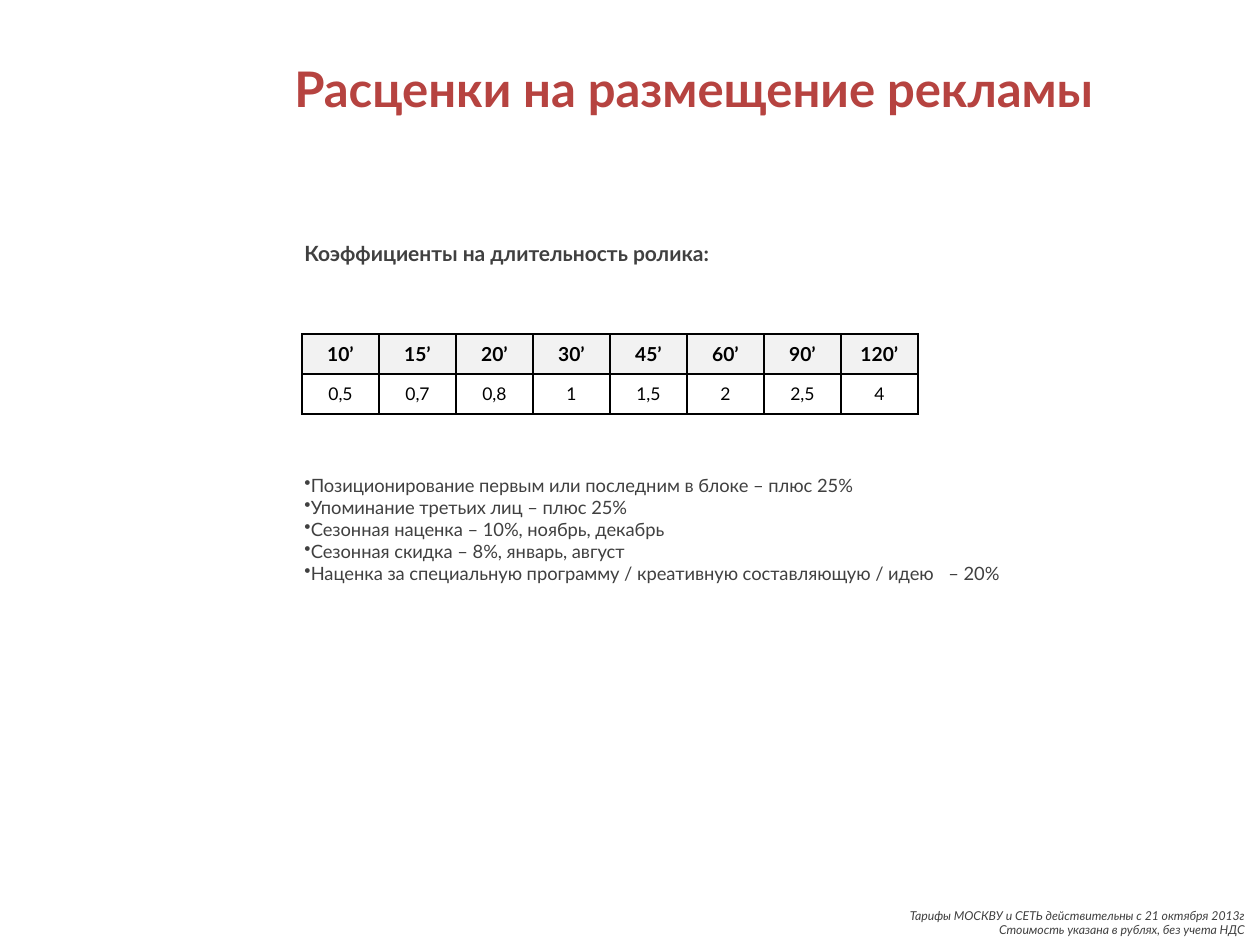
import pptx
import pptx.dml.color
import pptx.enum.text
import pptx.oxml
import pptx.oxml.ns
import pptx.util

EMU_PER_PX = 914400 / 126
ALIGN = pptx.enum.text.PP_ALIGN
MIDDLE = pptx.enum.text.MSO_ANCHOR.MIDDLE
RED, GRAY, BLACK, HEADER_FILL = "B64340", "404040", "000000", "F2F2F2"

DURATIONS = ["10’", "15’", "20’", "30’", "45’", "60’", "90’", "120’"]
COEFFICIENTS = ["0,5", "0,7", "0,8", "1", "1,5", "2", "2,5", "4"]
CONDITIONS = [
    "Позиционирование первым или последним в блоке – плюс 25%",
    "Упоминание третьих лиц – плюс 25%",
    "Сезонная наценка – 10%, ноябрь, декабрь",
    "Сезонная скидка – 8%, январь, август",
    "Наценка за специальную программу / креативную составляющую / идею\t– 20%",
]
FOOTNOTE = [
    "Тарифы МОСКВУ и СЕТЬ действительны с 21 октября 2013г",
    "Стоимость указана в рублях, без учета НДС",
]


def px(length):
    return pptx.util.Emu(round(length * EMU_PER_PX))


def rgb(color):
    return pptx.dml.color.RGBColor.from_string(color)


def add_xml(parent, tag, content="", attributes=""):
    namespace = pptx.oxml.ns.nsdecls("a")
    parent.append(pptx.oxml.parse_xml(
        f"<a:{tag} {namespace} {attributes}>{content}</a:{tag}>"))


class SlideBuilder:
    font_name = "Lato"

    def __init__(self, slide):
        self.slide = slide

    def style(self, para, size, color, bold=False, italic=False, align=ALIGN.LEFT):
        para.alignment = align
        for span in para.runs:
            span.font.name = self.font_name
            span.font.size = pptx.util.Pt(size)
            span.font.color.rgb = rgb(color)
            span.font.bold = bold
            span.font.italic = italic

    def text(self, left, top, width, height, lines, size, color, **style):
        box = self.slide.shapes.add_textbox(px(left), px(top), px(width), px(height))
        frame = box.text_frame
        frame.word_wrap = True
        frame.vertical_anchor = MIDDLE
        frame.text = "\n".join(lines)
        for para in frame.paragraphs:
            self.style(para, size, color, **style)
        return frame

    def bullets(self, left, top, width, height, lines, size, color, tab):
        frame = self.text(left, top, width, height, lines, size, color)
        for para in frame.paragraphs:
            properties = para._p.get_or_add_pPr()
            add_xml(properties, "buChar", attributes='char="•"')
            if "\t" in para.text:
                add_xml(properties, "tabLst", f'<a:tab pos="{px(tab)}" algn="l"/>')

    def border(self, cell, color, width):
        properties = cell._tc.get_or_add_tcPr()
        line_width = pptx.util.Pt(width)
        for side in "LRTB":
            add_xml(properties, f"ln{side}",
                    f'<a:solidFill><a:srgbClr val="{color}"/></a:solidFill>',
                    f'w="{line_width}"')

    def table(self, left, top, column_width, row_height, rows):
        columns = len(rows[0])
        grid = self.slide.shapes.add_table(
            len(rows), columns, px(left), px(top),
            px(column_width * columns), px(row_height * len(rows))).table
        grid.horz_banding = False
        grid.first_row = False
        for row_index, values in enumerate(rows):
            header = row_index == 0
            for column_index, value in enumerate(values):
                cell = grid.cell(row_index, column_index)
                cell.text = value
                cell.vertical_anchor = MIDDLE
                cell.margin_left = cell.margin_right = 0
                cell.margin_top = cell.margin_bottom = 0
                self.border(cell, BLACK, 1)
                if header:
                    cell.fill.solid()
                    cell.fill.fore_color.rgb = rgb(HEADER_FILL)
                else:
                    cell.fill.background()
                self.style(cell.text_frame.paragraphs[0], 11 if header else 10,
                           BLACK, bold=header, align=ALIGN.CENTER)


def main():
    deck = pptx.Presentation()
    deck.slide_width, deck.slide_height = px(1260), px(945)
    page = SlideBuilder(deck.slides.add_slide(deck.slide_layouts[6]))
    page.text(282, 20, 978, 135, ["Расценки на размещение рекламы"], 28, RED, bold=True)
    page.text(312, 901, 945, 43, FOOTNOTE, 7, GRAY, italic=True, align=ALIGN.RIGHT)
    page.text(292, 234, 541, 38, ["Коэффициенты на длительность ролика:"],
              12, GRAY, bold=True)
    page.table(302, 334, 77, 40, [DURATIONS, COEFFICIENTS])
    page.bullets(292, 467, 903, 124, CONDITIONS, 10.5, GRAY, tab=644)
    deck.save("out.pptx")


if __name__ == "__main__":
    main()
